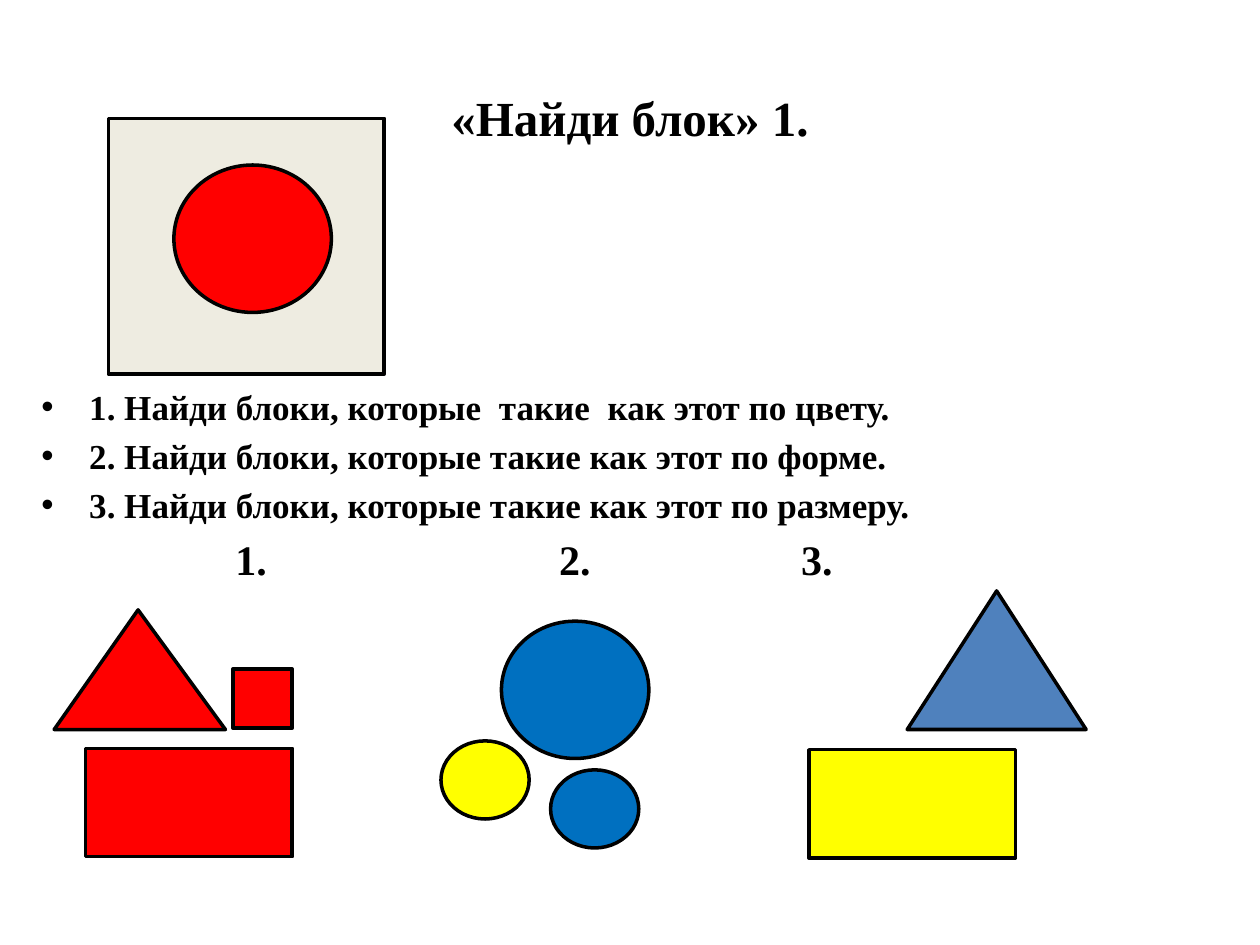
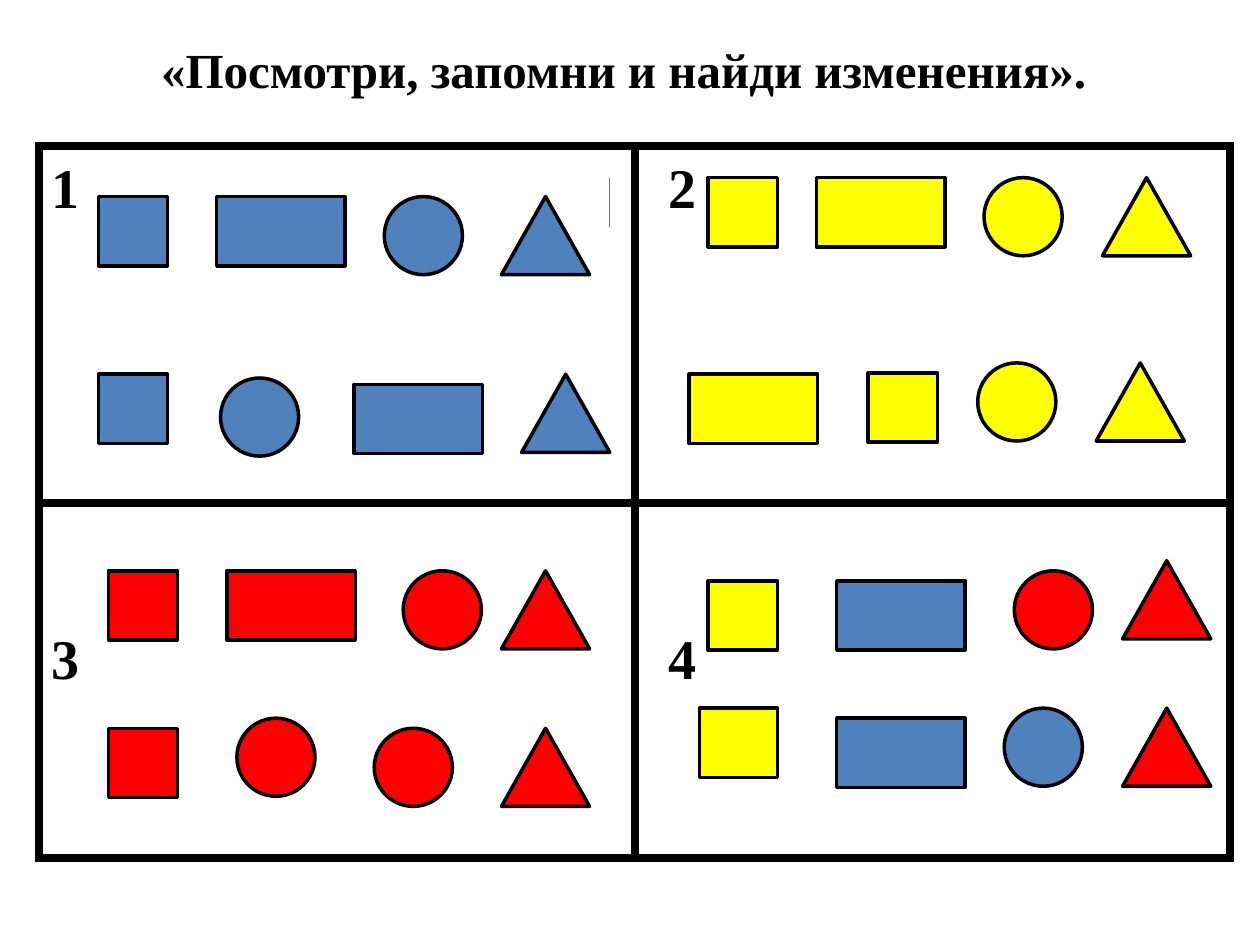
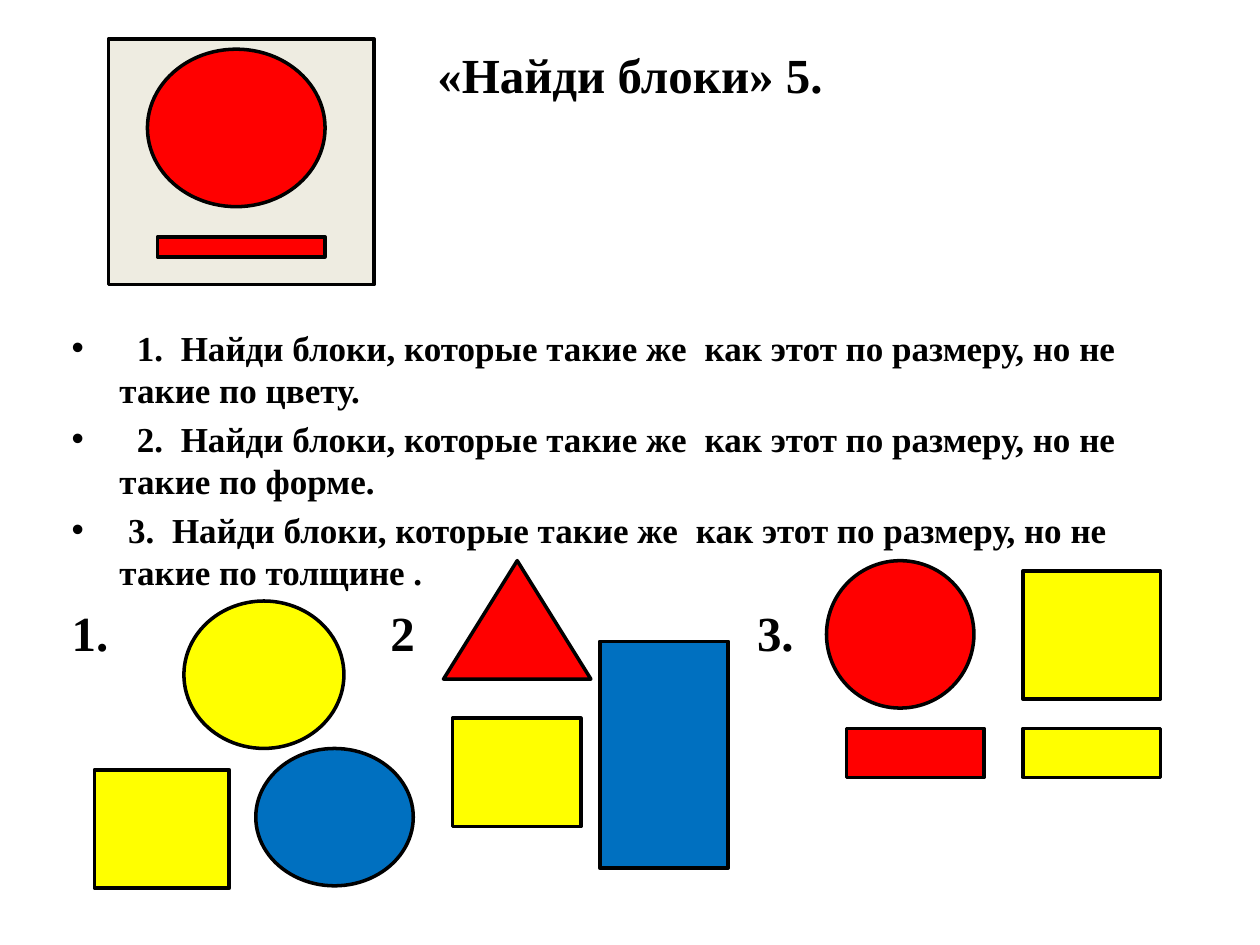
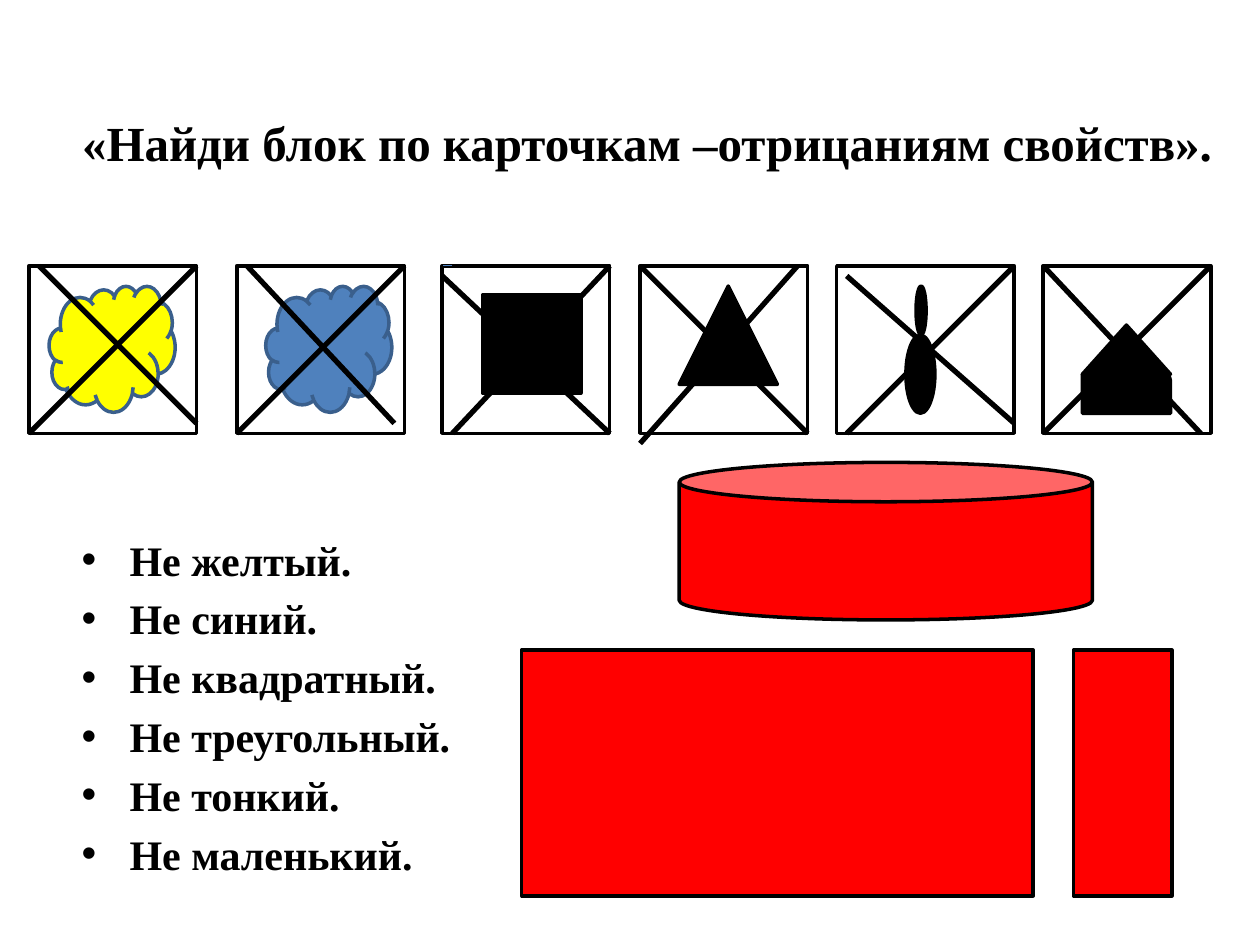
from dataclasses import dataclass

from lxml import etree
from pptx import Presentation
from pptx.dml.color import RGBColor
from pptx.enum.shapes import MSO_CONNECTOR, MSO_SHAPE
from pptx.enum.text import MSO_ANCHOR, PP_ALIGN
from pptx.oxml.ns import qn
from pptx.util import Inches, Pt

RECT = MSO_SHAPE.RECTANGLE
OVAL = MSO_SHAPE.OVAL
TRIANGLE = MSO_SHAPE.ISOSCELES_TRIANGLE
CLOUD = MSO_SHAPE.CLOUD
CAN = MSO_SHAPE.CAN
ROUND_ONE = MSO_SHAPE.ROUND_1_RECTANGLE
STRAIGHT = MSO_CONNECTOR.STRAIGHT
TOP, MIDDLE = MSO_ANCHOR.TOP, MSO_ANCHOR.MIDDLE
LEFT, CENTER = PP_ALIGN.LEFT, PP_ALIGN.CENTER


@dataclass(frozen=True)
class Theme:
    font: str = "Times New Roman"
    black: str = "000000"
    white: str = "FFFFFF"
    red: str = "FF0000"
    yellow: str = "FFFF00"
    blue: str = "0070C0"
    steel: str = "4F81BD"
    cream: str = "EEECE1"
    cloud_line: str = "3A5F8C"
    tick: str = "4B7EBC"
    title: int = 28
    task: int = 20
    answer: int = 24
    label: int = 28
    number: int = 32
    outline: float = 2
    cross: float = 3
    frame: float = 4.5
    hairline: float = 0.75


T = Theme()
INDENT = 0.38
WIDE_SPACE = "|"  # marks a space of double width

# Block sizes in the memory grid
SQUARE = (RECT, 0.55, 0.55)
WIDE = (RECT, 0.62, 0.55)
BAR = (RECT, 1.02, 0.55)
CIRCLE = (OVAL, 0.62, 0.62)
PEAK = (TRIANGLE, 0.7, 0.62)


def rgb(value):
    return RGBColor.from_string(value)


def add_block(s, kind, x, y, w, h, fill=None, line=T.black, width=T.outline):
    sp = s.shapes.add_shape(kind, Inches(x), Inches(y), Inches(w), Inches(h))
    sp.shadow.inherit = False
    if fill:
        sp.fill.solid()
        sp.fill.fore_color.rgb = rgb(fill)
    else:
        sp.fill.background()
    sp.line.color.rgb = rgb(line)
    sp.line.width = Pt(width)
    return sp


def add_group(s, x, y, parts):
    """Draw blocks (kind, dx, dy, w, h, fill[, line]) offset from (x, y)."""
    return [add_block(s, kind, x + dx, y + dy, *rest) for kind, dx, dy, *rest in parts]


def add_line(s, x1, y1, x2, y2, color=T.black, width=T.cross):
    line = s.shapes.add_connector(STRAIGHT, Inches(x1), Inches(y1), Inches(x2), Inches(y2))
    line.line.color.rgb = rgb(color)
    line.line.width = Pt(width)
    etree.SubElement(line._element.spPr, qn("a:effectLst"))


def add_text_box(s, x, y, w, h, anchor=TOP):
    tf = s.shapes.add_textbox(Inches(x), Inches(y), Inches(w), Inches(h)).text_frame
    tf.word_wrap = True
    tf.vertical_anchor = anchor
    return tf


def add_run(p, text, size):
    r = p.add_run()
    r.text = text
    for name, value in {"name": T.font, "size": Pt(size), "bold": True}.items():
        setattr(r.font, name, value)
    r.font.color.rgb = rgb(T.black)
    return r


def add_paragraph(tf, text, size, align=LEFT, bullet=False, tabs=(), before=0.0):
    """Fill the empty first paragraph, or append one with space above it."""
    first = not tf.paragraphs[0].runs
    p = tf.paragraphs[0] if first else tf.add_paragraph()
    pPr = p._p.get_or_add_pPr()
    if bullet:
        pPr.set("marL", str(Inches(INDENT)))
        pPr.set("indent", str(-Inches(INDENT)))
        etree.SubElement(pPr, qn("a:buFont"), typeface="Arial")
        etree.SubElement(pPr, qn("a:buChar"), char="•")
    if tabs:
        tab_list = etree.SubElement(pPr, qn("a:tabLst"))
        for tab in tabs:
            etree.SubElement(tab_list, qn("a:tab"), pos=str(Inches(tab)), algn="l")
    p.alignment = align
    p.space_before = Pt(0 if first else before or 0.2 * size)
    for i, piece in enumerate(text.split(WIDE_SPACE)):
        if i:
            space = add_run(p, " ", size)
            space.font._element.set("spc", str(size * 25))
        if piece:
            add_run(p, piece, size)


def add_title(s, text, x, y, w, h):
    add_paragraph(add_text_box(s, x, y, w, h, MIDDLE), text, T.title, CENTER)


def add_bullets(s, x, y, w, h, lines, size):
    tf = add_text_box(s, x, y, w, h)
    for line in lines:
        add_paragraph(tf, line, size, bullet=True)
    return tf


def add_sample(s, x, y, w, h, parts):
    add_block(s, RECT, x, y, w, h, T.cream)
    add_group(s, x, y, parts)


def add_quadrant(s, x, y, blocks):
    """Draw standard-size blocks (form, dx, dy, fill) inside one grid cell."""
    add_group(s, x, y, [(kind, dx, dy, w, h, fill)
                        for (kind, w, h), dx, dy, fill in blocks])


def add_negation_card(s, x, y, w, h, symbol, strokes):
    """A framed symbol crossed out by strokes (x1, y1, x2, y2)."""
    add_block(s, RECT, x, y, w, h, T.white)
    add_group(s, x, y, symbol)
    for x1, y1, x2, y2 in strokes:
        add_line(s, x + x1, y + y1, x + x2, y + y2)


def find_block_slide(s):
    add_title(s, "«Найди блок» 1.", 0.5, 0.46, 9, 0.94)
    tasks = [
        "1. Найди блоки, которые|такие|как этот по цвету.",
        "2. Найди блоки, которые такие как этот по форме.",
        "3. Найди блоки, которые такие как этот по размеру.",
    ]
    tf = add_bullets(s, 0.23, 3.01, 9.18, 4.1, tasks, T.task)
    add_paragraph(tf, "\t1.\t2.\t3.", T.answer, tabs=(1.54, 4.11, 6.03))
    add_sample(s, 0.86, 0.94, 2.19, 2.03, [(OVAL, 0.52, 0.37, 1.25, 1.17, T.red)])
    red_triangle, *_ = add_group(s, 0.43, 4.84, [
        (TRIANGLE, 0, 0, 1.36, 0.95, T.red),
        (RECT, 1.42, 0.47, 0.47, 0.47, T.red),
        (RECT, 0.25, 1.1, 1.64, 0.86, T.red),
    ])
    red_triangle.adjustments[0] = 0.49
    add_group(s, 3.5, 4.93, [
        (OVAL, 0, 0.95, 0.7, 0.62, T.yellow),
        (OVAL, 0.48, 0, 1.17, 1.09, T.blue),
        (OVAL, 0.87, 1.18, 0.7, 0.62, T.blue),
    ])
    add_group(s, 6.42, 4.69, [
        (TRIANGLE, 0.78, 0, 1.42, 1.1, T.steel),
        (RECT, 0, 1.26, 1.64, 0.86, T.yellow),
    ])


def memory_slide(s):
    add_title(s, "«Посмотри, запомни и найди изменения».", 0.45, 0.24, 9, 0.62)
    x, y, w, h = 0.31, 1.16, 9.45, 5.65
    mid_x, mid_y = x + 4.73, y + 2.83
    frame = add_block(s, RECT, x, y, w, h, width=T.frame)
    etree.SubElement(frame.line._get_or_add_ln(), qn("a:miter"), lim="800000")
    tf = frame.text_frame
    tf.vertical_anchor = TOP
    for numbers in ("1\t2", "3\t4"):
        add_paragraph(tf, numbers, T.number, tabs=(4.9,), before=231)
    add_quadrant(s, x, y, [
        (SQUARE, 0.47, 0.4, T.steel), (BAR, 1.41, 0.4, T.steel),
        (CIRCLE, 2.74, 0.4, T.steel), (PEAK, 3.67, 0.4, T.steel),
        (SQUARE, 0.47, 1.81, T.steel), (CIRCLE, 1.44, 1.84, T.steel),
        (BAR, 2.5, 1.89, T.steel), (PEAK, 3.83, 1.81, T.steel),
    ])
    add_quadrant(s, mid_x, y, [
        (SQUARE, 0.58, 0.25, T.yellow), (BAR, 1.44, 0.25, T.yellow),
        (CIRCLE, 2.77, 0.25, T.yellow), (PEAK, 3.71, 0.25, T.yellow),
        (BAR, 0.43, 1.81, T.yellow), (SQUARE, 1.85, 1.8, T.yellow),
        (CIRCLE, 2.72, 1.72, T.yellow), (PEAK, 3.66, 1.72, T.yellow),
    ])
    add_quadrant(s, x, mid_y, [
        (SQUARE, 0.55, 0.54, T.red), (BAR, 1.49, 0.54, T.red),
        (CIRCLE, 2.89, 0.54, T.red), (PEAK, 3.67, 0.54, T.red),
        (SQUARE, 0.55, 1.79, T.red), (CIRCLE, 1.57, 1.71, T.red),
        (CIRCLE, 2.66, 1.79, T.red), (PEAK, 3.67, 1.79, T.red),
    ])
    add_quadrant(s, mid_x, mid_y, [
        (SQUARE, 0.58, 0.62, T.yellow), (BAR, 1.6, 0.62, T.steel),
        (CIRCLE, 3.01, 0.54, T.red), (PEAK, 3.87, 0.46, T.red),
        (WIDE, 0.51, 1.63, T.yellow), (BAR, 1.6, 1.71, T.steel),
        (CIRCLE, 2.93, 1.63, T.steel), (PEAK, 3.87, 1.63, T.red),
    ])
    add_line(s, x, mid_y, x + w, mid_y, width=T.frame)
    add_line(s, mid_x, y, mid_x, y + h, width=T.frame)
    add_line(s, x + 4.53, y + 0.64, x + 4.53, y + 0.25, T.tick, T.hairline)


def find_blocks_slide(s):
    add_title(s, "«Найди блоки» 5.", 0.5, 0.24, 9, 0.7)
    tasks = [f"{number}|Найди блоки, которые такие же|как этот по размеру, но не такие по {trait}."
             for number, trait in (("|1.", "цвету"), ("|2.", "форме"), (" 3.", "толщине "))]
    tf = add_bullets(s, 0.47, 2.54, 9.06, 4.26, tasks, T.task)
    add_paragraph(tf, "1.\t2\t3.", T.label, tabs=(2.53, 5.44))
    add_sample(s, 0.86, 0.31, 2.11, 1.95, [
        (OVAL, 0.31, 0.08, 1.41, 1.25, T.red),
        (RECT, 0.39, 1.57, 1.33, 0.16, T.red),
    ])
    add_group(s, 0.75, 4.77, [
        (RECT, 0, 1.34, 1.07, 0.94, T.yellow),
        (OVAL, 1.28, 1.17, 1.25, 1.09, T.blue),
        (OVAL, 0.71, 0, 1.27, 1.17, T.yellow),
    ])
    add_group(s, 3.52, 4.45, [
        (TRIANGLE, 0, 0, 1.17, 0.94, T.red),
        (RECT, 1.24, 0.64, 1.02, 1.8, T.blue),
        (RECT, 0.07, 1.25, 1.02, 0.86, T.yellow),
    ])
    add_group(s, 6.56, 4.45, [
        (OVAL, 0, 0, 1.17, 1.17, T.red),
        (RECT, 1.56, 0.08, 1.09, 1.02, T.yellow),
        (RECT, 0.16, 1.33, 1.09, 0.39, T.red),
        (RECT, 1.56, 1.33, 1.09, 0.39, T.yellow),
    ])


def negation_slide(s):
    add_title(s, "«Найди блок по карточкам –отрицаниям свойств».", 0.5, 0.77, 9.27, 0.71)
    traits = ("желтый", "синий", "квадратный", "треугольный", "тонкий", "маленький")
    add_bullets(s, 0.55, 4.19, 4, 2.95, [f"Не {trait}." for trait in traits], T.answer)
    top, side = 2.11, 1.33
    rising = (0, side, side, 0)
    cards = [
        (0.23, side, [(CLOUD, 0.16, 0.16, 1, 1, T.yellow, T.cloud_line)],
         [(0.08, 0, side, 1.25), rising]),
        (1.88, side, [(CLOUD, 0.23, 0.16, 1, 1, T.steel, T.cloud_line)],
         [(0.08, 0, 1.25, 1.25), rising]),
        (3.51, side, [(RECT, 0.32, 0.23, 0.78, 0.78, T.black)],
         [(0.08, side, side, 0), (0, 0.08, side, side)]),
        (5.08, side, [(TRIANGLE, 0.31, 0.16, 0.78, 0.78, T.black)],
         [(0, 0, side, side), (0, 1.41, 1.25, 0)]),
        (6.64, 1.41, [(OVAL, 0.55, 0.55, 0.23, 0.62, T.black),
                      (OVAL, 0.63, 0.16, 0.08, 0.39, T.black)],
         [(0.08, 0.08, 1.41, 1.25), (0.08, side, 1.41, 0)]),
        (8.28, side, [(ROUND_ONE, 0.31, 0.86, 0.7, 0.31, T.black),
                      (TRIANGLE, 0.31, 0.47, 0.7, 0.39, T.black)],
         [(0, 0, 1.25, side), rising]),
    ]
    for x, width, symbol, strokes in cards:
        add_negation_card(s, x, top, width, side, symbol, strokes)
    add_line(s, 3.59, top, 3.52, top, T.tick, T.hairline)
    add_group(s, 4.14, 3.67, [
        (CAN, 1.25, 0, 3.28, 1.25, T.red),
        (RECT, 0, 1.49, 4.06, 1.95, T.red),
        (RECT, 4.38, 1.49, 0.78, 1.95, T.red),
    ])


def main():
    prs = Presentation()
    prs.slide_width, prs.slide_height = Inches(10), Inches(7.5)
    blank = prs.slide_layouts[6]
    for build in (find_block_slide, memory_slide, find_blocks_slide, negation_slide):
        build(prs.slides.add_slide(blank))
    prs.save("out.pptx")


if __name__ == "__main__":
    main()
